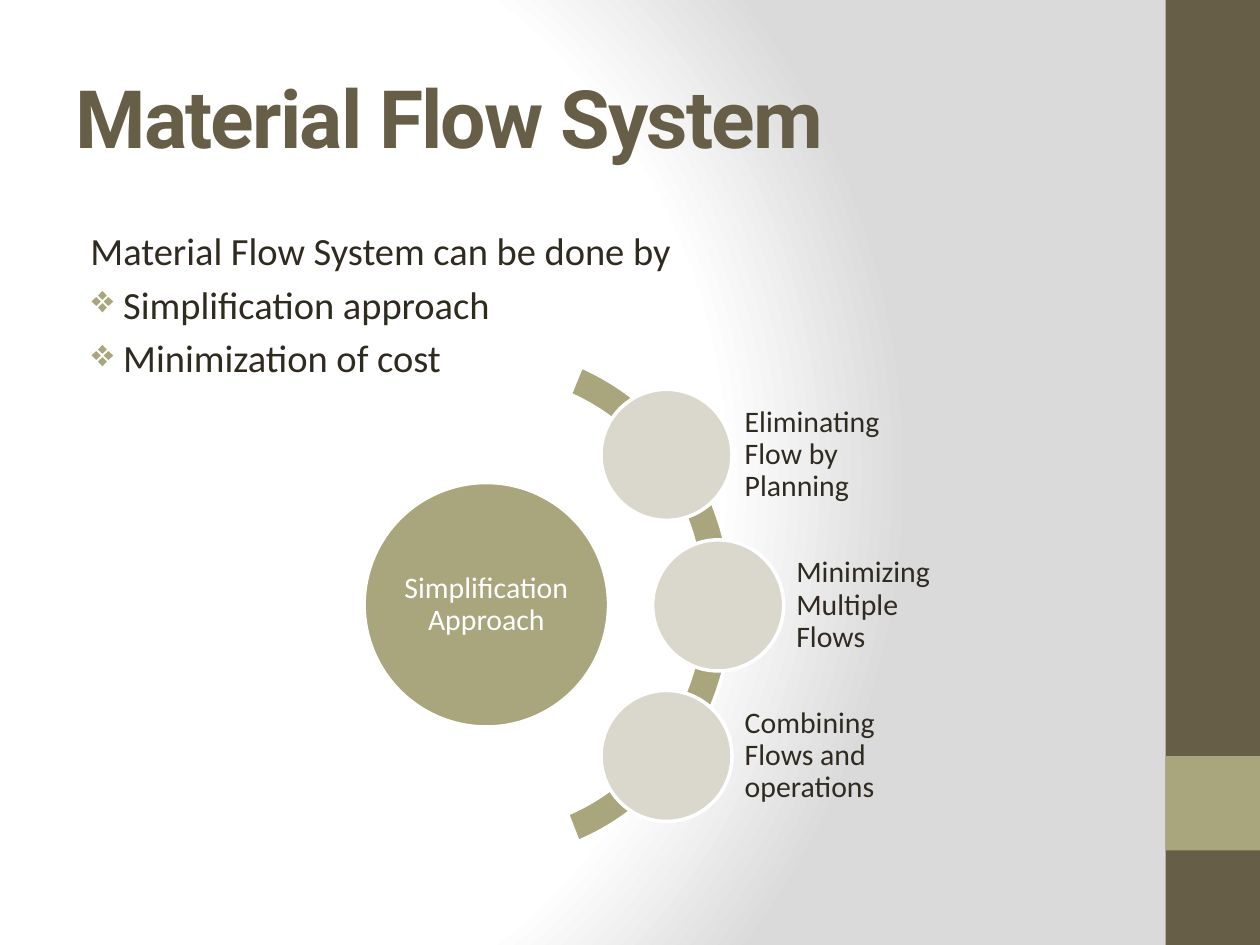
from dataclasses import dataclass
from typing import Any, NamedTuple

from pptx import Presentation, util as u
from pptx.dml.color import RGBColor
from pptx.enum import shapes, text
from pptx.oxml import parse_xml
from pptx.oxml.ns import nsdecls


@dataclass(frozen=True)
class Theme:
    brown: str = "675E47"
    olive: str = "A9A57C"
    pale: str = "DAD8CC"
    ink: str = "2F2B20"
    white: str = "FFFFFF"
    grey: str = "DADADA"
    head_font: str = "Roboto"
    body_font: str = "Calibri"
    title_size: float = 46
    body_size: float = 22
    label_size: float = 17
    outline: float = 2


class Area(NamedTuple):
    """Left, top, width and height in grid columns and rows."""
    col: float
    row: float
    cols: float
    rows: float

    def inset(self, gap: float) -> "Area":
        return Area(self.col + gap, self.row + gap, self.cols - 2 * gap, self.rows - 2 * gap)


class Node(NamedTuple):
    label: str
    col: float


THEME = Theme()
COLUMNS, ROWS = 40, 30
WIDTH, HEIGHT = u.Inches(10), u.Inches(7.5)

# Diagram geometry, in grid cells
HUB = Area(11.56, 15.32, 7.76, 7.76)
ARC = Area(7.56, 11, 15.68, 16.32)
ARC_ADJUSTMENTS = (175.28, 41.19, 0.06)
NODE_SIZE, NODE_TOP, NODE_STEP = 4.16, 12.36, 4.78
LABEL_SHIFT, LABEL_COLS, LABEL_ROWS = 4.48, 5.56, 4.04
NODES = (
    Node("Eliminating Flow by Planning", 19.08),
    Node("Minimizing Multiple Flows", 20.72),
    Node("Combining Flows and operations", 19.08),
)
BULLETS = ("Simplification approach", "Minimization of cost")


def place(area: Area) -> tuple[int, int, int, int]:
    across, down = WIDTH / COLUMNS, HEIGHT / ROWS
    return (round(area.col * across), round(area.row * down),
            round(area.cols * across), round(area.rows * down))


def apply(target: Any, values: dict[str, Any]) -> None:
    for name, value in values.items():
        setattr(target, name, value)


def add_figure(parent: Any, kind: Any, area: Area, fill: str, outlined: bool = True) -> Any:
    figure = parent.add_shape(kind, *place(area))
    figure.shadow.inherit = False
    figure.fill.solid()
    figure.fill.fore_color.rgb = RGBColor.from_string(fill)
    if outlined:
        figure.line.color.rgb = RGBColor.from_string(THEME.white)
        figure.line.width = u.Pt(THEME.outline)
    else:
        figure.line.fill.background()
    return figure


def add_box(parent: Any, area: Area, **frame_format: Any) -> Any:
    frame = parent.add_textbox(*place(area)).text_frame
    apply(frame, {"word_wrap": True, **frame_format})
    return frame


def write(para: Any, words: str, size: float, color: str,
          font: str = THEME.body_font, bold: bool = False, **para_format: Any) -> Any:
    apply(para, para_format)
    span = para.add_run()
    span.text = words
    apply(span.font, {"name": font, "size": u.Pt(size), "bold": bold})
    span.font.color.rgb = RGBColor.from_string(color)
    return span


def add_label(parent: Any, area: Area, words: str, color: str, after: float,
              align: Any = text.PP_ALIGN.LEFT) -> None:
    margins = {f"margin_{side}": u.Inches(0.02) for side in ("left", "top", "right", "bottom")}
    frame = add_box(parent, area, vertical_anchor=text.MSO_ANCHOR.MIDDLE, **margins)
    write(frame.paragraphs[0], words, THEME.label_size, color, alignment=align,
          line_spacing=0.9, space_after=u.Pt(THEME.label_size * after))


def indent(para: Any, left: float, first: float = 0, bullet: str = "") -> None:
    props = para._p.get_or_add_pPr()
    props.set("marL", str(u.Inches(left)))
    props.set("indent", str(u.Inches(first)))
    if bullet:
        props.append(parse_xml(
            f'<a:buClr {nsdecls("a")}><a:srgbClr val="{THEME.olive}"/></a:buClr>'))
        props.append(parse_xml(f'<a:buChar {nsdecls("a")} char="{bullet}"/>'))


def paint_background(page: Any) -> None:
    stops = "".join(
        f'<a:gs pos="{share * 1000}"><a:srgbClr val="{color}"/></a:gs>'
        for share, color in ((0, THEME.white), (75, THEME.white), (100, THEME.grey)))
    page._element.cSld.insert(0, parse_xml(
        f'<p:bg {nsdecls("p", "a")}><p:bgPr><a:gradFill rotWithShape="1">'
        f'<a:gsLst>{stops}</a:gsLst><a:path path="circle">'
        '<a:fillToRect l="20000" t="50000" r="100000" b="50000"/></a:path>'
        '</a:gradFill><a:effectLst/></p:bgPr></p:bg>'))


def add_text(page: Any) -> None:
    # Title
    frame = add_box(page.shapes, Area(2, 1.2, 33.32, 5),
                    vertical_anchor=text.MSO_ANCHOR.MIDDLE)
    span = write(frame.paragraphs[0], "Material Flow System", THEME.title_size,
                 THEME.brown, THEME.head_font, True)
    span.font._element.set("spc", "-100")

    # Introduction and bullets
    frame = add_box(page.shapes, Area(2, 7, 33.32, 21))
    body = {"size": THEME.body_size, "color": THEME.ink,
            "space_before": u.Pt(THEME.body_size * 0.2)}
    write(frame.paragraphs[0], "Material Flow System can be done by", **body)
    indent(frame.paragraphs[0], 0.12)
    for words in BULLETS:
        para = frame.add_paragraph()
        write(para, words, **body)
        indent(para, 0.38, -0.25, "❖")


def add_diagram(page: Any) -> None:
    diagram = page.shapes.add_group_shape().shapes
    oval = shapes.MSO_SHAPE.OVAL

    # Hub and arc
    add_figure(diagram, oval, HUB, THEME.olive)
    add_label(diagram, HUB.inset(1.15), "Simplification Approach", THEME.white, 0.35,
              text.PP_ALIGN.CENTER)
    arc = add_figure(diagram, shapes.MSO_SHAPE.BLOCK_ARC, ARC, THEME.olive)
    for index, value in enumerate(ARC_ADJUSTMENTS):
        arc.adjustments[index] = value

    # Nodes along the arc
    for index, node in enumerate(NODES):
        top = NODE_TOP + index * NODE_STEP
        add_figure(diagram, oval, Area(node.col, top, NODE_SIZE, NODE_SIZE), THEME.pale)
        label_top = top + (NODE_SIZE - LABEL_ROWS) / 2
        add_label(diagram, Area(node.col + LABEL_SHIFT, label_top, LABEL_COLS, LABEL_ROWS),
                  node.label, THEME.ink, 0.1)


def main() -> None:
    deck = Presentation()
    apply(deck, {"slide_width": WIDTH, "slide_height": HEIGHT})
    page = deck.slides.add_slide(deck.slide_layouts[6])
    paint_background(page)

    # Side band with accent square
    for area, color in ((Area(37, 0, 3, ROWS), THEME.brown), (Area(37, 24, 3, 3), THEME.olive)):
        add_figure(page.shapes, shapes.MSO_SHAPE.RECTANGLE, area, color, outlined=False)

    add_text(page)
    add_diagram(page)
    deck.save("out.pptx")


if __name__ == "__main__":
    main()
